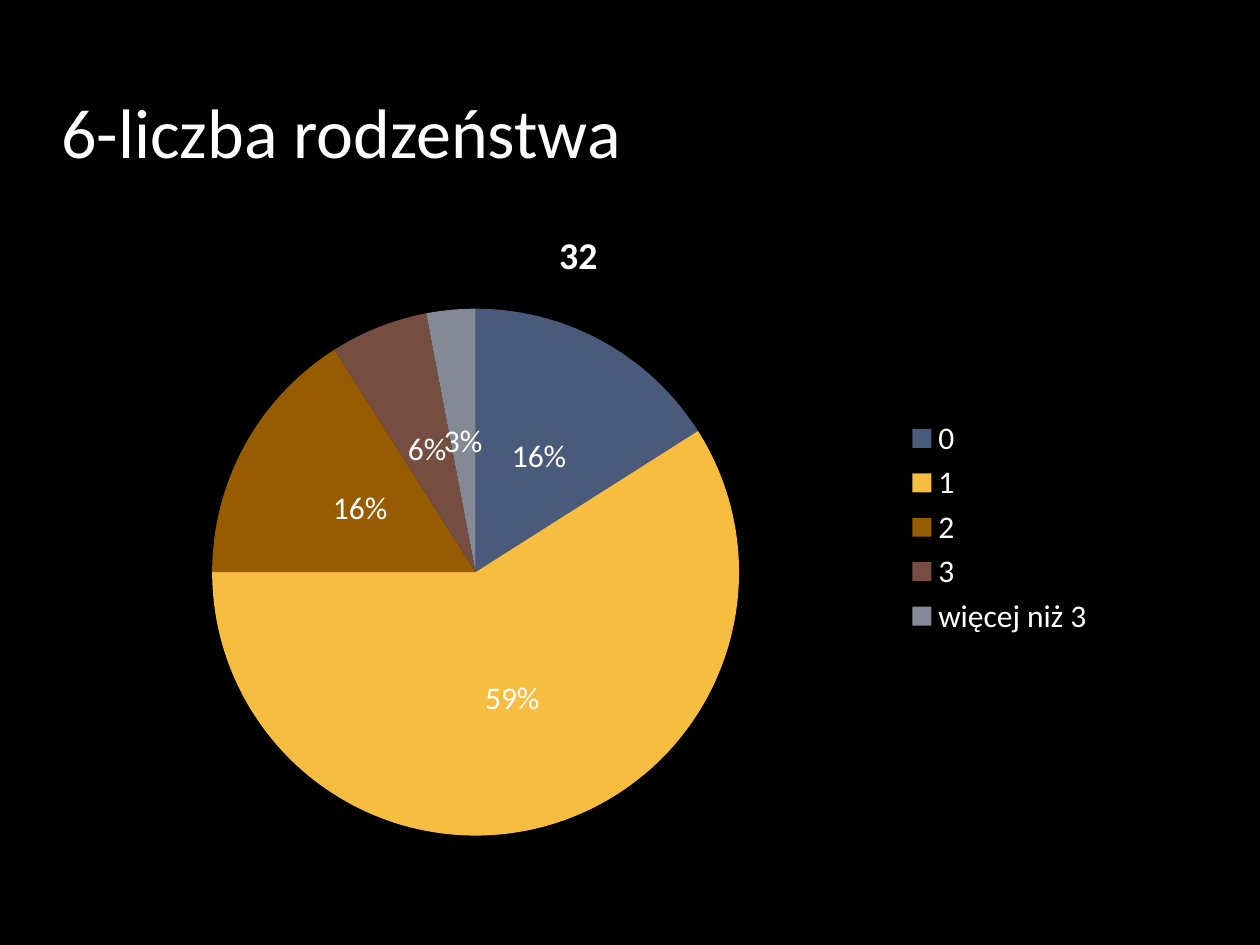
from dataclasses import dataclass

from pptx import Presentation
from pptx import util as u
from pptx.chart.data import CategoryChartData
from pptx.dml.color import RGBColor
from pptx.enum import chart as charts, text


@dataclass(frozen=True)
class Theme:
    font: str = "Calibri"
    background: str = "000000"
    ink: str = "FFFFFF"
    slices: tuple = ("4A5A7A", "F7BD40", "975C00", "754D41", "838995")
    title_size: float = 40
    chart_title_size: float = 21.6
    chart_size: float = 18


THEME = Theme()
SIBLINGS = {"0": 16, "1": 59, "2": 16, "3": 6, "więcej niż 3": 3}
LEFT, WIDTH = u.Inches(0.39), u.Inches(8.4)


def paint(fill, color):
    fill.solid()
    fill.fore_color.rgb = RGBColor.from_string(color)


def style_font(font, size, bold=False):
    font.name = THEME.font
    font.size = u.Pt(size)
    font.bold = bold
    font.color.rgb = RGBColor.from_string(THEME.ink)


def add_title(page, words):
    box = page.shapes.add_textbox(LEFT, u.Inches(0.25), WIDTH, u.Inches(1.17))
    frame = box.text_frame
    frame.word_wrap = True
    frame.vertical_anchor = text.MSO_ANCHOR.BOTTOM
    para = frame.paragraphs[0]
    para.space_before = u.Pt(4)
    span = para.add_run()
    span.text = words
    style_font(span.font, THEME.title_size)


def add_pie(page, title, shares):
    data = CategoryChartData()
    data.categories = list(shares)
    data.add_series("Series 1", list(shares.values()))
    pie = page.shapes.add_chart(
        charts.XL_CHART_TYPE.PIE, LEFT, u.Inches(1.6), WIDTH, u.Inches(5.17), data
    ).chart
    style_font(pie.font, THEME.chart_size)

    # Chart title
    span = pie.chart_title.text_frame.paragraphs[0].add_run()
    span.text = title
    style_font(span.font, THEME.chart_title_size, bold=True)
    pie.chart_title.include_in_layout = False

    # Legend
    pie.has_legend = True
    pie.legend.position = charts.XL_LEGEND_POSITION.RIGHT
    pie.legend.include_in_layout = False
    style_font(pie.legend.font, THEME.chart_size)

    # Slices and their percentages
    plot = pie.plots[0]
    plot.vary_by_categories = True
    for index, color in enumerate(THEME.slices):
        paint(plot.series[0].points[index].format.fill, color)
    labels = plot.series[0].data_labels
    labels.show_percentage = True
    labels.show_value = False
    labels.number_format = "0%"
    labels.number_format_is_linked = False
    labels.position = charts.XL_LABEL_POSITION.CENTER
    style_font(labels.font, THEME.chart_size)


def main():
    deck = Presentation()
    deck.slide_width, deck.slide_height = u.Inches(10), u.Inches(7.5)
    page = deck.slides.add_slide(deck.slide_layouts[6])
    paint(page.background.fill, THEME.background)
    add_pie(page, "32", SIBLINGS)
    add_title(page, "6-liczba rodzeństwa")
    deck.save("out.pptx")


if __name__ == "__main__":
    main()
